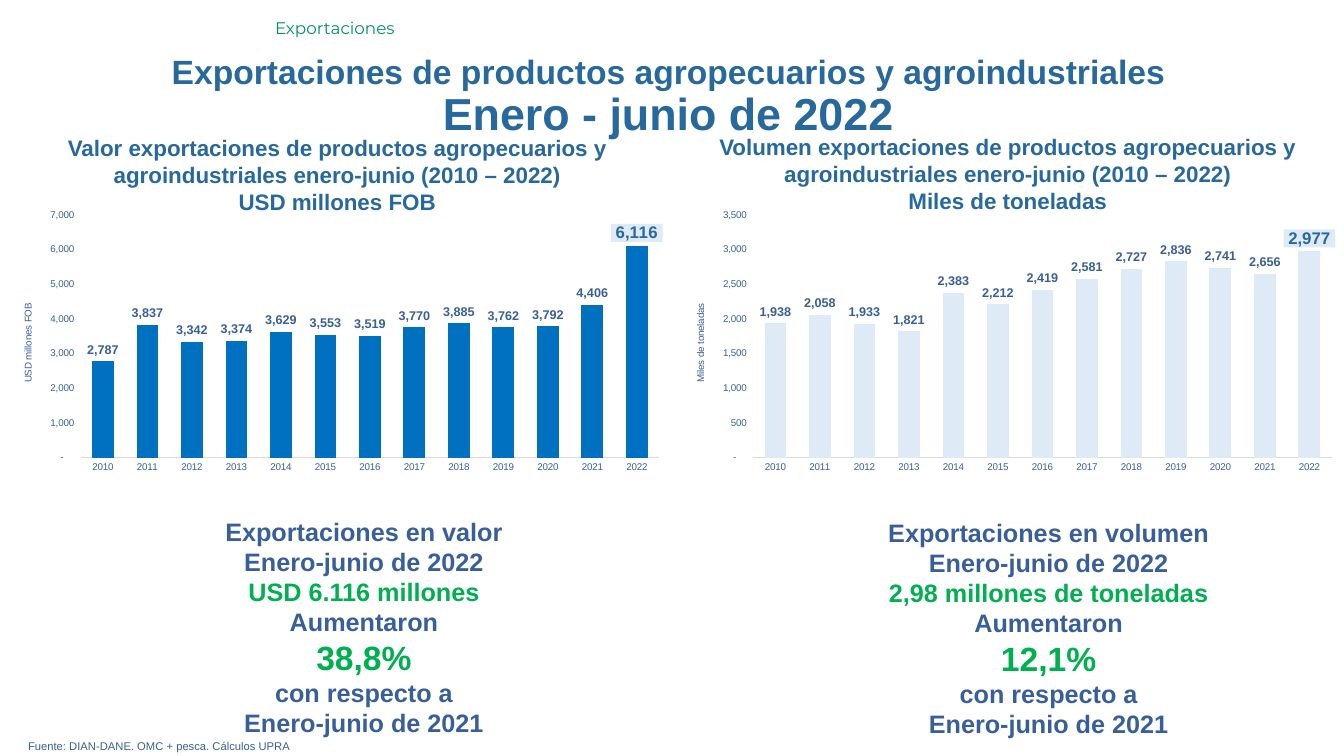
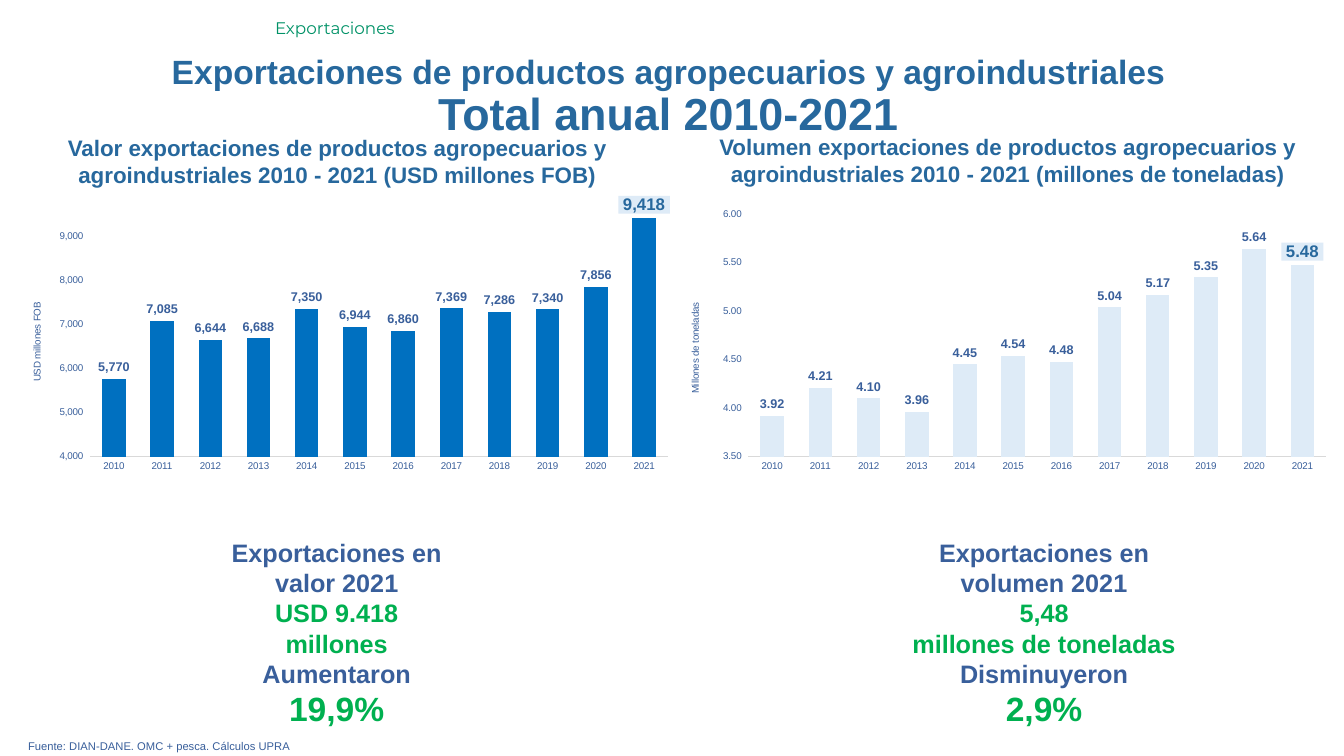
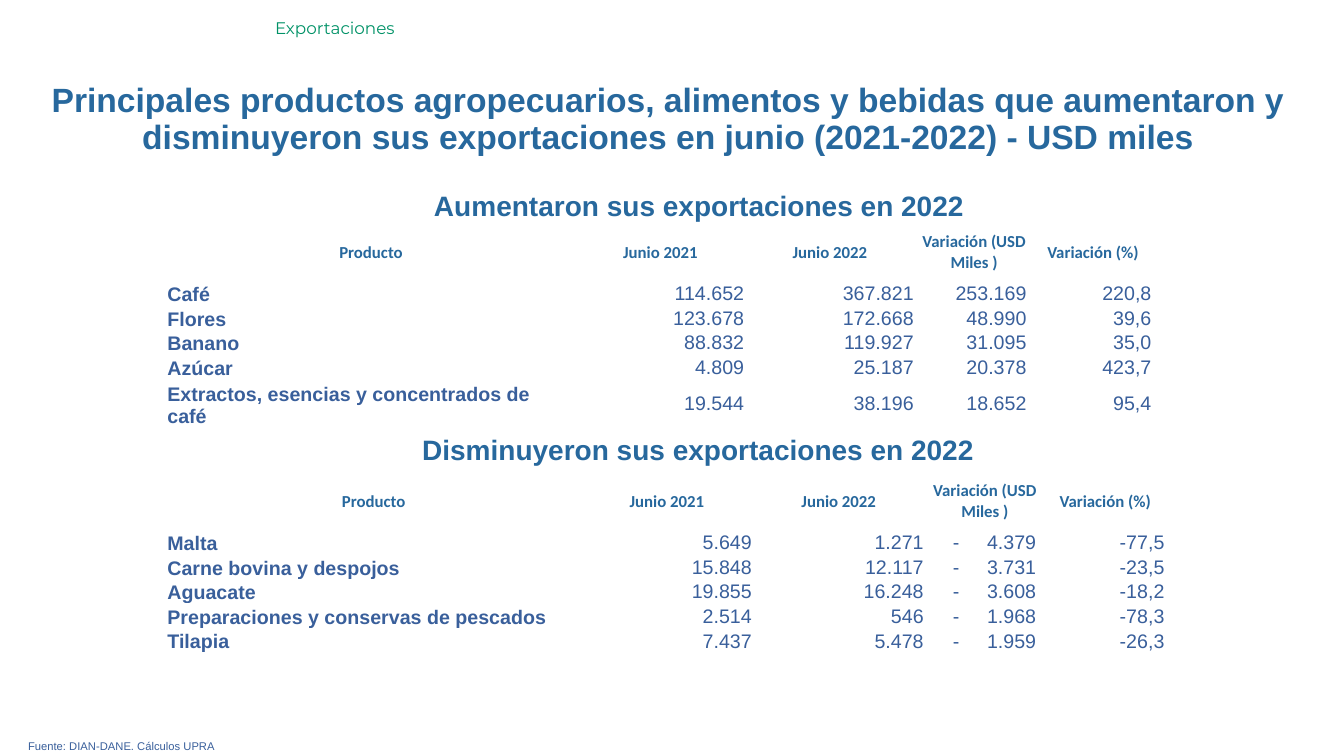
"""Builds three slides on Colombian farm exports: half-year, full-year and product tables."""
from copy import deepcopy
from dataclasses import dataclass

from pptx import Presentation
from pptx.chart.data import CategoryChartData
from pptx.dml.color import RGBColor
from pptx.enum.chart import XL_CHART_TYPE, XL_LABEL_POSITION, XL_TICK_MARK
from pptx.enum.text import MSO_ANCHOR, PP_ALIGN
from pptx.oxml import parse_xml
from pptx.oxml.ns import nsdecls
from pptx.util import Inches, Pt

LEFT, CENTER, RIGHT, JUSTIFY = PP_ALIGN.LEFT, PP_ALIGN.CENTER, PP_ALIGN.RIGHT, PP_ALIGN.JUSTIFY
TOP, MIDDLE, BOTTOM = MSO_ANCHOR.TOP, MSO_ANCHOR.MIDDLE, MSO_ANCHOR.BOTTOM
CLUSTERED = XL_CHART_TYPE.COLUMN_CLUSTERED
OUTSIDE_END = XL_LABEL_POSITION.OUTSIDE_END
NO_TICK = XL_TICK_MARK.NONE


@dataclass(frozen=True)
class Style:
    size: int
    color: str
    bold: bool = True
    name: str = "Arial"


@dataclass(frozen=True)
class Theme:
    value_bar: str = "0070C0"
    pale_blue: str = "DEEBF7"
    axis_line: str = "D9D9D9"
    section: Style = Style(12, "009267", False, "Montserrat")
    title: Style = Style(24, "27689D")
    period: Style = Style(32, "27689D")
    chart_heading: Style = Style(16, "27689D")
    table_heading: Style = Style(20, "27689D")
    source: Style = Style(8, "395F9B", False)
    fact: Style = Style(18, "395F9B")
    amount: Style = Style(18, "00B050")
    change: Style = Style(24, "00B050")
    axis: Style = Style(7, "395F9B", False)
    bar_label: Style = Style(9, "395F9B")
    last_label: Style = Style(12, "27689D")
    header: Style = Style(12, "27689D", True, "Calibri")
    product: Style = Style(14, "395F9B")
    figure: Style = Style(14, "395F9B", False)


THEME = Theme()

presentation = Presentation()
presentation.slide_width = Inches(13.33)
presentation.slide_height = Inches(7.5)
COLUMN = presentation.slide_width / 100
ROW = presentation.slide_height / 100
BLANK = presentation.slide_layouts[6]


def set_font(font, style):
    """Apply a theme style to a font."""
    font.size = Pt(style.size)
    font.name = style.name
    font.bold = style.bold
    font.color.rgb = RGBColor.from_string(style.color)


def add_text(slide, box, lines, alignment=CENTER, anchor=TOP, spacing=1.0):
    """Add a text box, placed in grid units, with one paragraph per (text, style) line."""
    left, top, width, height = box
    shape = slide.shapes.add_textbox(
        int(left * COLUMN), int(top * ROW), int(width * COLUMN), int(height * ROW))
    frame = shape.text_frame
    frame.word_wrap = True
    frame.vertical_anchor = anchor
    frame.text = "\n".join(text for text, _ in lines)
    for paragraph, (_, style) in zip(frame.paragraphs, lines):
        paragraph.alignment = alignment
        paragraph.line_spacing = spacing
        set_font(paragraph.runs[0].font, style)


OVERVIEW_TITLE = "Exportaciones de productos agropecuarios y agroindustriales"
OVERVIEW_BOX = (6.6, 7.6, 86.27, 10.67)
OVERVIEW_SOURCE = "Fuente: DIAN-DANE. OMC + pesca. Cálculos UPRA"
pages = [
    (OVERVIEW_BOX, [(OVERVIEW_TITLE, THEME.title), ("Enero - junio de 2022", THEME.period)],
     OVERVIEW_SOURCE),
    (OVERVIEW_BOX, [(OVERVIEW_TITLE, THEME.title), ("Total anual 2010-2021", THEME.period)],
     OVERVIEW_SOURCE),
    ((0, 7.07, 99.4, 17.6),
     [("Principales productos agropecuarios, alimentos y bebidas que aumentaron y disminuyeron "
       "sus exportaciones en junio (2021-2022) - USD miles", THEME.title)],
     "Fuente: DIAN-DANE. Cálculos UPRA"),
]
slides = []
for title_box, title_lines, source in pages:
    slide = presentation.slides.add_slide(BLANK)
    add_text(slide, (19.73, 1.73, 80.27, 4), [("Exportaciones", THEME.section)], LEFT)
    add_text(slide, title_box, title_lines, CENTER, MIDDLE, 0.9)
    add_text(slide, (1.35, 97.2, 96.85, 3.2), [(source, THEME.source)], JUSTIFY)
    slides.append(slide)
half_year, full_year, products = slides

headings = [
    (half_year, 0.15, 17.07,
     ["Valor exportaciones de productos agropecuarios y agroindustriales enero-junio (2010 – 2022)",
      "USD millones FOB"]),
    (half_year, 50.04, 16.93,
     ["Volumen exportaciones de productos agropecuarios y agroindustriales enero-junio (2010 – 2022)",
      "Miles de toneladas"]),
    (full_year, 0.15, 17.07,
     ["Valor exportaciones de productos agropecuarios y agroindustriales 2010 - 2021 "
      "(USD millones FOB)"]),
    (full_year, 50.04, 16.93,
     ["Volumen exportaciones de productos agropecuarios y agroindustriales 2010 - 2021 "
      "(millones de toneladas)"]),
]
for slide, left, top, lines in headings:
    add_text(slide, (left, top, 49.89, 12), [(line, THEME.chart_heading) for line in lines])

half_year_facts = [
    (10.95, 67.6, "valor", "USD 6.116 millones", "38,8%"),
    (61.89, 67.73, "volumen", "2,98 millones de toneladas", "12,1%"),
]
for left, top, measure, amount, change in half_year_facts:
    add_text(half_year, (left, top, 32.26, 31), [
        (f"Exportaciones en {measure}", THEME.fact),
        ("Enero-junio de 2022", THEME.fact),
        (amount, THEME.amount),
        ("Aumentaron", THEME.fact),
        (change, THEME.change),
        ("con respecto a", THEME.fact),
        ("Enero-junio de 2021", THEME.fact),
    ])

full_year_facts = [
    (14.1, 21.9, "valor", "USD 9.418", "millones", "Aumentaron", "19,9%"),
    (65.72, 23.93, "volumen", "5,48", "millones de toneladas", "Disminuyeron", "2,9%"),
]
for left, width, measure, amount, unit, direction, change in full_year_facts:
    add_text(full_year, (left, 70.4, width, 29), [
        (f"Exportaciones en {measure} 2021", THEME.fact),
        (amount, THEME.amount),
        (unit, THEME.amount),
        (direction, THEME.fact),
        (change, THEME.change),
    ])

WHOLE = '_-* #,##0_-;\\-* #,##0_-;_-* "-"??_-;_-@_-'
DECIMAL = '_(* #,##0.00_);_(* \\(#,##0.00\\);_(* "-"??_);_(@_)'
PLOT_LAYOUT = {"layoutTarget": "inner", "xMode": "edge", "yMode": "edge",
               "x": 0.12, "y": 0.1, "w": 0.86, "h": 0.7}
AXIS_TITLE_LAYOUT = {"xMode": "edge", "yMode": "edge", "x": 0.03, "y": 0.35}
charts = [
    (half_year, 0, 23.87, "USD millones FOB", THEME.value_bar, WHOLE, None, None,
     [2787, 3837, 3342, 3374, 3629, 3553, 3519, 3770, 3885, 3762, 3792, 4406, 6116]),
    (half_year, 50.04, 23.87, "Miles de toneladas", THEME.pale_blue, WHOLE, None, None,
     [1938, 2058, 1933, 1821, 2383, 2212, 2419, 2581, 2727, 2836, 2741, 2656, 2977]),
    (full_year, 0.68, 23.73, "USD millones FOB", THEME.value_bar, WHOLE, 4000, 9500,
     [5770, 7085, 6644, 6688, 7350, 6944, 6860, 7369, 7286, 7340, 7856, 9418]),
    (full_year, 49.66, 23.73, "Millones de toneladas", THEME.pale_blue, DECIMAL, 3.5, None,
     [3.92, 4.21, 4.1, 3.96, 4.45, 4.54, 4.48, 5.04, 5.17, 5.35, 5.64, 5.48]),
]
for slide, left, top, unit, color, number_format, minimum, maximum, values in charts:
    chart_data = CategoryChartData(number_format=number_format)
    chart_data.categories = [str(2010 + index) for index in range(len(values))]
    chart_data.add_series(unit, values)
    chart = slide.shapes.add_chart(
        CLUSTERED, int(left * COLUMN), int(top * ROW), int(50.04 * COLUMN), int(45.87 * ROW),
        chart_data).chart
    chart.has_legend = False
    chart.has_title = False
    set_font(chart.font, THEME.axis)

    for axis in (chart.category_axis, chart.value_axis):
        axis.has_major_gridlines = False
        axis.major_tick_mark = axis.minor_tick_mark = NO_TICK
        set_font(axis.tick_labels.font, THEME.axis)
    chart.category_axis.format.line.color.rgb = RGBColor.from_string(THEME.axis_line)
    chart.category_axis.format.line.width = Pt(0.75)
    value_axis = chart.value_axis
    value_axis.format.line.fill.background()
    value_axis.minimum_scale = minimum
    value_axis.maximum_scale = maximum
    value_axis.tick_labels.number_format = number_format
    value_axis.tick_labels.number_format_is_linked = False
    axis_title = value_axis.axis_title.text_frame
    axis_title.text = unit
    set_font(axis_title.paragraphs[0].runs[0].font, THEME.axis)

    plot = chart.plots[0]
    plot.vary_by_categories = False
    plot.gap_width = 105
    plot.overlap = 74
    series = plot.series[0]
    series.format.fill.solid()
    series.format.fill.fore_color.rgb = RGBColor.from_string(color)
    labels = series.data_labels
    labels.show_value = True
    labels.number_format = number_format
    labels.number_format_is_linked = False
    labels.position = OUTSIDE_END
    set_font(labels.font, THEME.bar_label)
    last_label = series.points[len(values) - 1].data_label
    set_font(last_label.font, THEME.last_label)
    last_label.position = OUTSIDE_END

    label_text = chart.element.xpath("//c:dLbl/c:txPr")[0]
    label_text.addprevious(deepcopy(chart.element.xpath("//c:dLbls/c:numFmt")[0]))
    label_text.addprevious(parse_xml(
        f'<c:spPr {nsdecls("c", "a")}><a:solidFill><a:srgbClr val="{THEME.pale_blue}"/>'
        '</a:solidFill></c:spPr>'))
    for query, position, layout in (("//c:plotArea", 0, PLOT_LAYOUT),
                                    ("//c:valAx/c:title", 1, AXIS_TITLE_LAYOUT)):
        parent = chart.element.xpath(query)[0]
        for old_layout in parent.xpath("c:layout"):
            parent.remove(old_layout)
        settings = "".join(f'<c:{key} val="{value}"/>' for key, value in layout.items())
        parent.insert(position, parse_xml(
            f'<c:layout {nsdecls("c")}><c:manualLayout>{settings}</c:manualLayout></c:layout>'))

HEADER = ["Producto", "Junio 2021", "Junio 2022", "Variación (USD Miles )", "Variación (%)"]
COLUMN_SHARES = [41.5, 17.2, 17.2, 12.05, 12.05]
DIFFERENCE = 3
tables = [
    ("Aumentaron sus exportaciones en 2022", (16.35, 24.27, 71.34, 5.87), 29.47, 73.37, [
        ["Café", "114.652", "367.821", "253.169", "220,8"],
        ["Flores", "123.678", "172.668", "48.990", "39,6"],
        ["Banano", "88.832", "119.927", "31.095", "35,0"],
        ["Azúcar", "4.809", "25.187", "20.378", "423,7"],
        ["Extractos, esencias y concentrados de café", "19.544", "38.196", "18.652", "95,4"],
    ]),
    ("Disminuyeron sus exportaciones en 2022", (13.35, 56.53, 77.19, 5.87), 62.4, 74.34, [
        ["Malta", "5.649", "1.271", "-\t4.379", "-77,5"],
        ["Carne bovina y despojos", "15.848", "12.117", "-\t3.731", "-23,5"],
        ["Aguacate", "19.855", "16.248", "-\t3.608", "-18,2"],
        ["Preparaciones y conservas de pescados", "2.514", "546", "-\t1.968", "-78,3"],
        ["Tilapia", "7.437", "5.478", "-\t1.959", "-26,3"],
    ]),
]
for heading, heading_box, top, width, rows in tables:
    add_text(products, heading_box, [(heading, THEME.table_heading)])
    table = products.shapes.add_table(
        len(rows) + 1, len(HEADER), int(12.38 * COLUMN), int(top * ROW),
        int(width * COLUMN), int(24 * ROW)).table
    table.first_row = table.horz_banding = False
    for column, share in zip(table.columns, COLUMN_SHARES):
        column.width = int(width * share / 100 * COLUMN)
    for row_index, row in enumerate([HEADER] + rows):
        table.rows[row_index].height = int((2.67 if row_index else 7.73) * ROW)
        for column_index, text in enumerate(row):
            cell = table.cell(row_index, column_index)
            cell.fill.background()
            cell.margin_left = cell.margin_right = cell.margin_top = Inches(0.01)
            cell.margin_bottom = 0
            cell.vertical_anchor = MIDDLE
            cell.text = text
            paragraph = cell.text_frame.paragraphs[0]
            if row_index == 0:
                style, paragraph.alignment = THEME.header, CENTER
            elif column_index == 0:
                style, paragraph.alignment = THEME.product, LEFT
                cell.vertical_anchor = BOTTOM
            else:
                style, paragraph.alignment = THEME.figure, RIGHT
                if column_index == DIFFERENCE:
                    cell.margin_right = Inches(0.07)
            if "\t" in text:
                paragraph.alignment = LEFT
                cell.margin_left = int(2.1 * COLUMN)
                paragraph._p.get_or_add_pPr().append(parse_xml(
                    f'<a:tabLst {nsdecls("a")}><a:tab pos="{int(6.2 * COLUMN)}" algn="r"/>'
                    '</a:tabLst>'))
            for run in paragraph.runs:
                set_font(run.font, style)

presentation.save("out.pptx")
